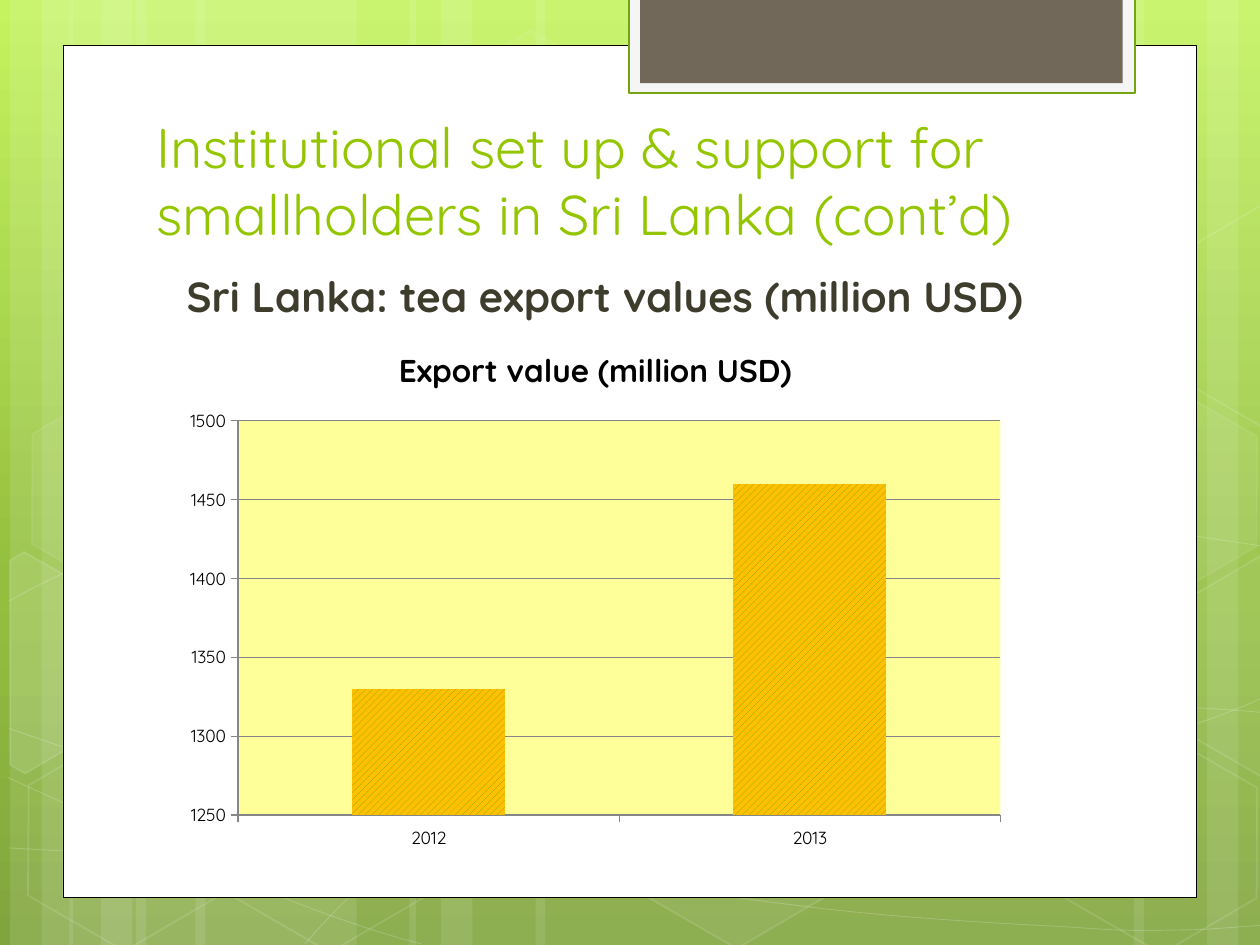
import pptx
import pptx.chart.data
import pptx.dml.color
import pptx.enum.chart
import pptx.enum.dml
import pptx.enum.shapes
import pptx.enum.text
import pptx.oxml
import pptx.oxml.ns
import pptx.util

Inches, Pt = pptx.util.Inches, pptx.util.Pt
SHAPE = pptx.enum.shapes.MSO_SHAPE
ALIGN, ANCHOR = pptx.enum.text.PP_ALIGN, pptx.enum.text.MSO_ANCHOR
qn = pptx.oxml.ns.qn

FONT = "Quicksand"
COLORS = {"white": "FFFFFF", "black": "000000", "green": "74A510", "title": "94C600",
          "body": "3E3D2D", "tab": "F5F5F5", "brown": "71685A", "plot": "FFFF99",
          "bar": "FFC000", "axis": "868686"}
BACKGROUND = [(0, "C3F35F"), (0.62, "93BF3F"), (1, "81A53E")]

# Background decoration: stripes as (left, width)
STRIPES = [(1.08, 1.75), (0.08, 0.5), (0.33, 0.83), (1.55, 1.75), (0.55, 0.5), (0.8, 0.83),
           (7.33, 1.75), (9.58, 0.5), (9, 0.83), (4.25, 3.08), (3.25, 0.5), (3.5, 0.83)]
# Bezier curves: a start point, then three points for each segment
CURVES = [
    [(0.07, 6.73), (0.61, 6.76), (1.15, 6.79), (1.9, 6.78), (2.65, 6.77), (3.58, 6.75),
     (4.58, 6.65), (5.58, 6.55), (7, 6.36), (7.92, 6.17), (8.83, 5.98), (9.77, 5.68),
     (10.07, 5.51)],
    [(0.07, 4.77), (0.36, 4.61), (0.65, 4.46), (1.21, 4.31), (1.78, 4.16), (2.59, 3.94),
     (3.47, 3.87), (4.36, 3.8), (5.44, 3.79), (6.54, 3.87), (7.64, 3.95), (9.47, 4.26),
     (10.07, 4.34)],
    [(0.06, 6.17), (1.27, 6.72), (2.47, 7.27), (3.34, 7.49)],
    [(0.07, 5.78), (0.38, 5.89), (0.7, 6), (1.28, 6.16), (1.86, 6.31), (2.73, 6.56),
     (3.57, 6.73), (4.4, 6.9), (5.45, 7.08), (6.28, 7.18), (7.11, 7.29), (8, 7.33),
     (8.53, 7.36), (9.05, 7.4), (9.19, 7.38), (9.45, 7.38), (9.71, 7.37), (9.89, 7.35),
     (10.07, 7.34)],
    [(2.42, 7.49), (2.6, 7.29), (2.78, 7.09), (3.02, 6.91), (3.26, 6.73), (3.6, 6.53),
     (3.88, 6.39), (4.16, 6.25), (4.33, 6.19), (4.7, 6.09), (5.06, 5.99), (5.73, 5.85),
     (6.08, 5.78), (6.44, 5.71), (6.49, 5.71), (6.8, 5.69), (7.11, 5.66), (7.6, 5.63),
     (7.94, 5.62), (8.29, 5.61), (8.86, 5.62), (9.53, 5.62), (9.71, 5.63), (9.88, 5.64),
     (10.06, 5.66)],
]
# Hexagons as (left, top, fill opacity, line opacity) in percent
HEXAGONS = [(3.34, 0.36, 4, 8), (4.97, 5.89, 6, 12), (0.11, 5.91, 0, 12),
            (0.14, 3.12, 7, 8), (1.74, 5.92, 0, 12), (7.53, 4.53, 10, 12),
            (8.34, 5.93, 0, 12), (8.34, 3.14, 7, 8)]
# Hexagons cut by the slide edge as (points, fill opacity)
CUT_HEXAGONS = [
    ([(0.08, 4.45), (0.19, 4.38), (0.96, 4.82), (0.95, 5.7), (0.2, 6.14), (0.08, 6.07)], 10),
    ([(9.26, 4.85), (10.01, 4.41), (10.09, 4.46), (10.09, 6.13), (10.02, 6.17),
      (9.26, 5.73)], 4),
    ([(9.26, 2.07), (10.01, 1.63), (10.1, 1.68), (10.09, 3.35), (10.02, 3.39),
      (9.26, 2.95)], 0),
]
# Panels as (box, fill, line, line width)
PANELS = [((0.5, 0.36, 9, 6.76), "white", "black", 0.5),
          ((4.99, -0.02, 4.02, 0.76), "tab", "green", 1.25),
          ((5.08, -0.02, 3.83, 0.68), "brown", None, 0)]
# Texts as (box, words, font, color, anchor, alignment, left indent)
TEXTS = [
    ((1.14, 0.76, 7.68, 1.25),
     "Institutional set up & support for smallholders in Sri Lanka (cont’d)",
     {"size": Pt(32), "bold": False}, "title", ANCHOR.BOTTOM, ALIGN.LEFT, 0),
    ((0.98, 2.1, 7.57, 4.88), "Sri Lanka: tea export values (million USD)",
     {"size": Pt(24), "bold": True}, "body", ANCHOR.TOP, ALIGN.CENTER, 0.07),
]
CHART_BOX = (1.38, 2.57, 6.69, 4.25)
PLOT_BOX = (1.89, 3.34, 6.05, 3.13)
CHART_TITLE = "Export value (million USD)"
EXPORTS = {"2012": 1330, "2013": 1460}


def rgb(name):
    return pptx.dml.color.RGBColor.from_string(COLORS[name])


def apply(target, formats):
    for key, value in formats.items():
        setattr(target, key, value)


def paint(shape, fill=None, line=None, width=1, fill_alpha=100, line_alpha=100):
    shape.shadow.inherit = False
    for part, color, alpha in ((shape.fill, fill, fill_alpha),
                               (shape.line.fill, line, line_alpha)):
        if color is None or alpha == 0:
            part.background()
        else:
            part.solid()
            part.fore_color.rgb = rgb(color)
    if line:
        shape.line.width = Pt(width)
    for route, alpha in (("a:solidFill/a:srgbClr", fill_alpha),
                         ("a:ln/a:solidFill/a:srgbClr", line_alpha)):
        for color in shape._element.spPr.findall(route, pptx.oxml.ns._nsmap):
            if alpha < 100:
                color.append(color.makeelement(qn("a:alpha"), {"val": str(alpha * 1000)}))


def add_box(page, kind, box):
    return page.shapes.add_shape(kind, *map(Inches, box))


def add_outline(page, points, close):
    points = [(Inches(x), Inches(y)) for x, y in points]
    builder = page.shapes.build_freeform(*points[0])
    builder.add_line_segments(points[1:], close=close)
    return builder.convert_to_shape()


def add_curve(page, nodes):
    shape = add_outline(page, nodes, False)
    outline = next(shape._element.iter(qn("a:path")))
    lines = outline.findall(qn("a:lnTo"))
    for start in range(0, len(lines), 3):
        curve = outline.makeelement(qn("a:cubicBezTo"), {})
        outline.append(curve)
        for line in lines[start:start + 3]:
            curve.append(line[0])
            outline.remove(line)
    return shape


def add_background(page):
    fill = page.background.fill
    fill.gradient()
    fill.gradient_angle = 270
    stops = next(page._element.iter(qn("a:gsLst")))
    for stop in list(stops):
        stops.remove(stop)
    for position, color in BACKGROUND:
        stops.append(pptx.oxml.parse_xml(
            f'<a:gs {pptx.oxml.ns.nsdecls("a")} pos="{round(position * 100000)}">'
            f'<a:srgbClr val="{color}"/></a:gs>'))


def add_decoration(page):
    for left, width in STRIPES:
        paint(add_box(page, SHAPE.RECTANGLE, (left, 0, width, 7.5)), "white", fill_alpha=10)
    for nodes in CURVES:
        paint(add_curve(page, nodes), None, "white", 0.5, line_alpha=20)
    for left, top, fill_alpha, line_alpha in HEXAGONS:
        hexagon = add_box(page, SHAPE.HEXAGON, (left, top, 1.75, 1.52))
        hexagon.rotation = 30
        hexagon.adjustments[0] = 0.285
        paint(hexagon, "white", "white", 1, fill_alpha, line_alpha)
    for points, fill_alpha in CUT_HEXAGONS:
        paint(add_outline(page, points, True), "white", "white", 1, fill_alpha, 12)


def add_text(page, box, words, font, color, anchor, alignment, indent):
    frame = page.shapes.add_textbox(*map(Inches, box)).text_frame
    apply(frame, {"word_wrap": True, "vertical_anchor": anchor})
    para = frame.paragraphs[0]
    para.alignment = alignment
    para._p.get_or_add_pPr().set("marL", str(Inches(indent)))
    span = para.add_run()
    span.text = words
    apply(span.font, {"name": FONT, **font})
    span.font.color.rgb = rgb(color)


def add_export_chart(page):
    data = pptx.chart.data.CategoryChartData()
    data.categories = list(EXPORTS)
    data.add_series(CHART_TITLE, list(EXPORTS.values()))
    chart = page.shapes.add_chart(pptx.enum.chart.XL_CHART_TYPE.COLUMN_CLUSTERED,
                                  *map(Inches, CHART_BOX), data).chart
    apply(chart, {"has_legend": False, "has_title": True})
    frame = chart.chart_title.text_frame
    frame.text = CHART_TITLE
    title_font = frame.paragraphs[0].runs[0].font
    for font, size, bold in ((chart.font, 10, False), (title_font, 18, True)):
        apply(font, {"name": FONT, "size": Pt(size), "bold": bold})
        font.color.rgb = rgb("black")

    # Axes and bars
    values = chart.value_axis
    apply(values, {"minimum_scale": 1250, "maximum_scale": 1500, "major_unit": 50,
                   "has_major_gridlines": True})
    for part in (values, chart.category_axis, values.major_gridlines):
        part.format.line.color.rgb = rgb("axis")
        part.format.line.width = Pt(0.75)
    for axis in (values, chart.category_axis):
        axis.major_tick_mark = pptx.enum.chart.XL_TICK_MARK.OUTSIDE
    apply(chart.plots[0], {"gap_width": 150, "vary_by_categories": False})
    fill = chart.plots[0].series[0].format.fill
    fill.patterned()
    fill.pattern = pptx.enum.dml.MSO_PATTERN.WIDE_UPWARD_DIAGONAL
    fill.fore_color.rgb = rgb("green")
    fill.back_color.rgb = rgb("bar")

    # Plot area position and fill
    spaces = pptx.oxml.ns.nsdecls("c", "a")
    area = next(chart._chartSpace.iter(qn("c:plotArea")))
    for layout in area.findall(qn("c:layout")):
        area.remove(layout)
    left, top, width, height = CHART_BOX
    shares = {"x": (PLOT_BOX[0] - left) / width, "y": (PLOT_BOX[1] - top) / height,
              "w": PLOT_BOX[2] / width, "h": PLOT_BOX[3] / height}
    modes = "".join(f'<c:{key}Mode val="edge"/>' for key in "xy")
    sizes = "".join(f'<c:{key} val="{share}"/>' for key, share in shares.items())
    area.insert(0, pptx.oxml.parse_xml(
        f'<c:layout {spaces}><c:manualLayout><c:layoutTarget val="inner"/>'
        f'{modes}{sizes}</c:manualLayout></c:layout>'))
    area.append(pptx.oxml.parse_xml(
        f'<c:spPr {spaces}><a:solidFill><a:srgbClr val="{COLORS["plot"]}"/>'
        f'</a:solidFill></c:spPr>'))


def main():
    deck = pptx.Presentation()
    apply(deck, {"slide_width": Inches(10), "slide_height": Inches(7.5)})
    page = deck.slides.add_slide(deck.slide_layouts[6])
    add_background(page)
    add_decoration(page)
    for box, fill, line, width in PANELS:
        paint(add_box(page, SHAPE.RECTANGLE, box), fill, line, width)
    for text in TEXTS:
        add_text(page, *text)
    add_export_chart(page)
    deck.save("out.pptx")


if __name__ == "__main__":
    main()
